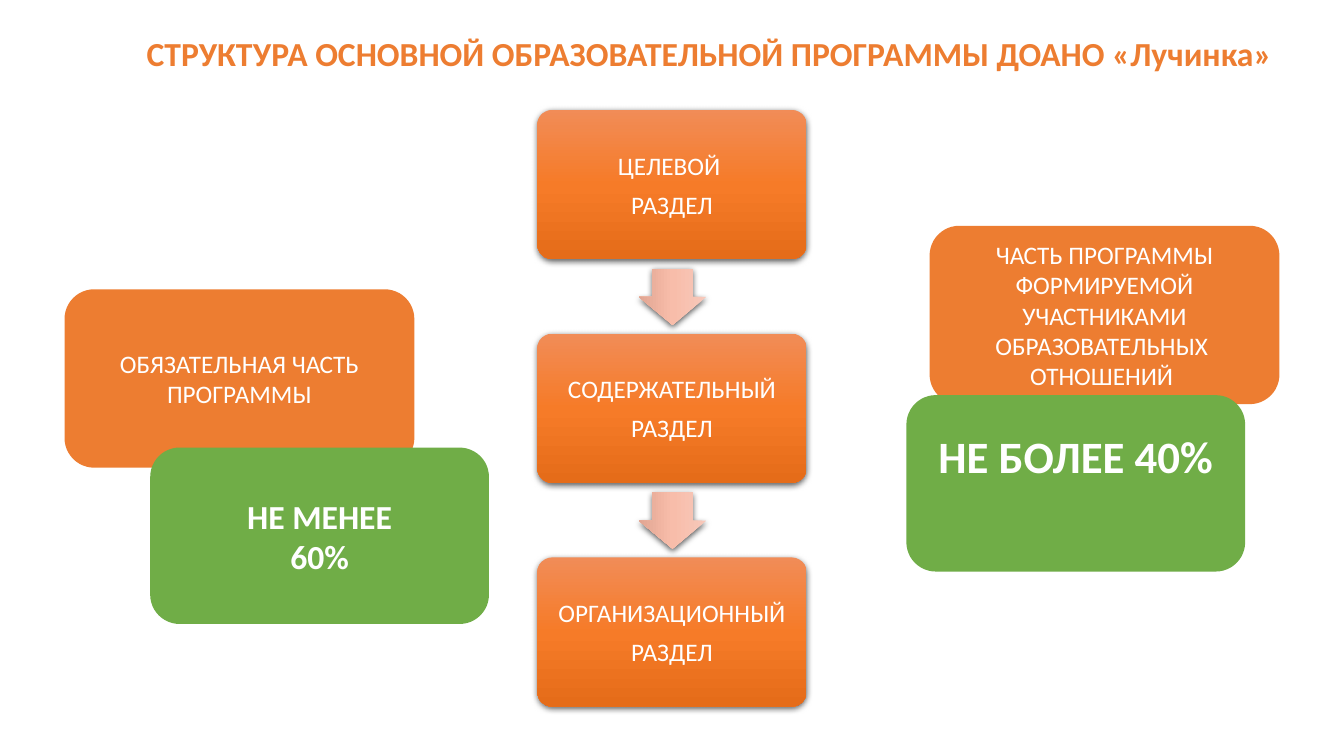
"""Builds the slide on the structure of the main educational programme."""
from dataclasses import dataclass

from lxml import etree
from pptx import Presentation
from pptx.dml.color import RGBColor
from pptx.enum.shapes import MSO_SHAPE
from pptx.enum.text import MSO_ANCHOR, MSO_AUTO_SIZE, PP_ALIGN
from pptx.oxml import parse_xml
from pptx.oxml.ns import nsdecls, qn
from pptx.util import Inches, Pt

ROUNDED = MSO_SHAPE.ROUNDED_RECTANGLE
CARD = MSO_SHAPE.FLOWCHART_ALTERNATE_PROCESS
ARROW = MSO_SHAPE.RIGHT_ARROW
MIDDLE = MSO_ANCHOR.MIDDLE
CENTER = PP_ALIGN.CENTER
NO_AUTOSIZE = MSO_AUTO_SIZE.NONE


@dataclass(frozen=True)
class Theme:
    font: str = "Calibri"
    orange: str = "ED7D31"
    green: str = "70AD47"
    white: str = "FFFFFF"
    section_gradient: tuple = ("F18C57", "F67B28", "E56C19")
    arrow_gradient: tuple = ("F7C8BA", "F8BDAA", "E1A592")
    body: int = 18
    heading: int = 24
    share: int = 32


THEME = Theme()


def write_text(shape, lines, size, color, bold=False, space_after=0):
    frame = shape.text_frame
    frame.word_wrap = True
    frame.auto_size = NO_AUTOSIZE
    frame.vertical_anchor = MIDDLE
    for index, line in enumerate(lines):
        paragraph = frame.add_paragraph() if index else frame.paragraphs[0]
        paragraph.alignment = CENTER
        paragraph.space_after = Pt(space_after)
        run = paragraph.add_run()
        run.text = line
        run.font.name = THEME.font
        run.font.size = Pt(size)
        run.font.bold = bold
        run.font.color.rgb = RGBColor.from_string(color)


def add_gradient_shape(slide, kind, box, colors):
    shape = slide.shapes.add_shape(kind, *map(Inches, box))
    shape.line.fill.background()
    shape.fill.background()
    properties = shape.element.spPr
    gradient = parse_xml(f'<a:gradFill {nsdecls("a")} rotWithShape="1"><a:gsLst/>'
                         '<a:lin ang="5400000" scaled="0"/></a:gradFill>')
    for index, color in enumerate(colors):
        stop = etree.SubElement(gradient[0], qn("a:gs"), pos=str(index * 50000))
        etree.SubElement(stop, qn("a:srgbClr"), val=color)
    properties.replace(properties.find(qn("a:noFill")), gradient)
    properties.append(parse_xml(
        f'<a:effectLst {nsdecls("a")}><a:outerShdw blurRad="57150" dist="19050" '
        'dir="5400000" algn="ctr" rotWithShape="0"><a:srgbClr val="000000">'
        '<a:alpha val="63000"/></a:srgbClr></a:outerShdw></a:effectLst>'))
    return shape


presentation = Presentation()
presentation.slide_width = Inches(13.33)
presentation.slide_height = Inches(7.5)
slide = presentation.slides.add_slide(presentation.slide_layouts[5])

title = slide.shapes.title
title.left, title.top = Inches(1.3), Inches(0.28)
title.width, title.height = Inches(11.47), Inches(0.5)
write_text(title, ["СТРУКТУРА ОСНОВНОЙ ОБРАЗОВАТЕЛЬНОЙ ПРОГРАММЫ ДОАНО «Лучинка»"],
           THEME.heading, THEME.orange, bold=True)

sections = ["ЦЕЛЕВОЙ ", "СОДЕРЖАТЕЛЬНЫЙ", "ОРГАНИЗАЦИОННЫЙ"]
section_top, section_step = 1.09, 2.22
for index, name in enumerate(sections):
    top = section_top + index * section_step
    section = add_gradient_shape(slide, ROUNDED, (5.33, top, 2.67, 1.48),
                                 THEME.section_gradient)
    section.adjustments[0] = 0.1
    frame = section.text_frame
    frame.margin_left = frame.margin_right = Inches(0.03)
    write_text(section, [name, "РАЗДЕЛ"], THEME.body, THEME.white, space_after=6.3)
    if index < len(sections) - 1:
        arrow = add_gradient_shape(slide, ARROW, (6.39, top + 1.52, 0.56, 0.67),
                                   THEME.arrow_gradient)
        arrow.adjustments[0] = 0.6
        arrow.rotation = 90

part_size, share_size = (3.47, 1.77), (3.36, 1.75)
cards = [
    ((0.64, 2.87), part_size, THEME.orange, ["ОБЯЗАТЕЛЬНАЯ ЧАСТЬ ПРОГРАММЫ"],
     THEME.body, False, 0.05),
    ((9.22, 2.24), part_size, THEME.orange,
     ["ЧАСТЬ ПРОГРАММЫ ФОРМИРУЕМОЙ УЧАСТНИКАМИ ОБРАЗОВАТЕЛЬНЫХ ", "ОТНОШЕНИЙ "],
     THEME.body, False, 0.05),
    ((1.49, 4.44), share_size, THEME.green, ["НЕ МЕНЕЕ", "60%"],
     THEME.heading, True, 0.05),
    ((8.99, 3.92), share_size, THEME.green, ["НЕ БОЛЕЕ 40%"],
     THEME.share, True, 0.59),
]
for position, dimensions, color, lines, size, bold, bottom_margin in cards:
    card = slide.shapes.add_shape(CARD, *map(Inches, position + dimensions))
    card.shadow.inherit = False
    card.fill.solid()
    card.fill.fore_color.rgb = RGBColor.from_string(color)
    card.line.fill.background()
    card.text_frame.margin_bottom = Inches(bottom_margin)
    write_text(card, lines, size, THEME.white, bold)

presentation.save("out.pptx")
